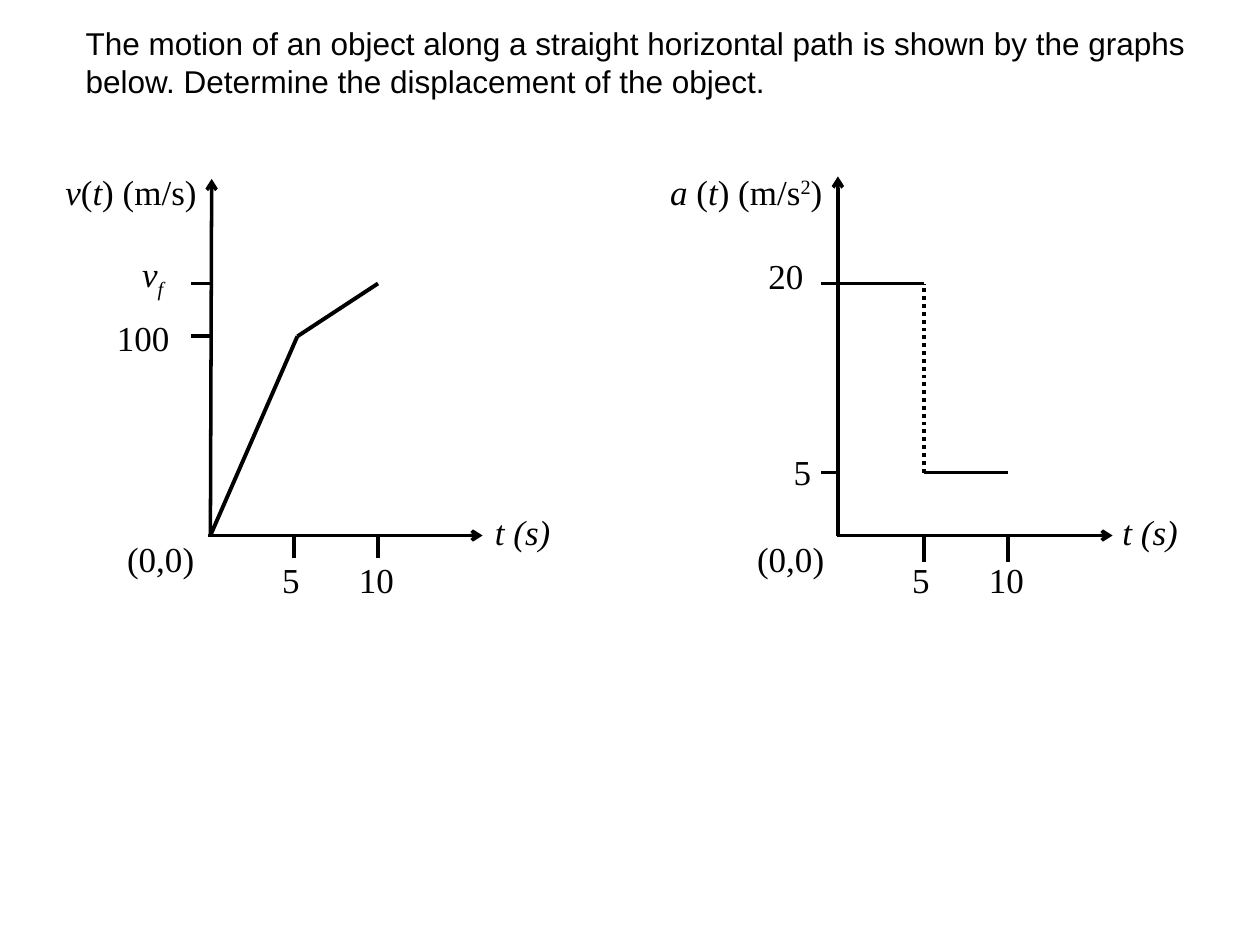
from dataclasses import dataclass
from typing import NamedTuple

from lxml.etree import SubElement
from pptx import Presentation
from pptx.dml.color import RGBColor
from pptx.enum.dml import MSO_LINE_DASH_STYLE as Dash
from pptx.enum.shapes import MSO_CONNECTOR as Connector
from pptx.enum.text import MSO_ANCHOR as Anchor, MSO_AUTO_SIZE as AutoSize, PP_ALIGN as Align
from pptx.oxml.ns import qn
from pptx.util import Emu, Pt

BLACK = "000000"
SUBSCRIPT, SUPERSCRIPT = -25, 30


def px(length: int) -> Emu:
    """100 px make one inch."""
    return Emu(length * 9144)


def color(hex_string: str) -> RGBColor:
    return RGBColor.from_string(hex_string)


class Piece(NamedTuple):
    text: str
    italic: bool = False
    baseline: int = 0


class Label(NamedTuple):
    left: int
    top: int
    width: int
    height: int
    pieces: list[Piece]


class Line(NamedTuple):
    start: tuple[int, int]
    end: tuple[int, int]
    weight: float = 2.25
    dotted: bool = False
    arrow: bool = False


@dataclass
class Graph:
    origin: int  # x of the zero on the time axis
    vertical_axis: Line
    time_axis: Line
    tick_bottom: int
    tick_levels: list[int]
    curve: list[Line]
    labels: list[Label]


AXIS_Y = 425
TIME_TICKS = (66, 133)
TICK_LENGTH = 15
TIME_NAME = [Piece("t (s)", True)]

GRAPHS = [
    # Velocity against time
    Graph(
        origin=167,
        vertical_axis=Line((167, AXIS_Y), (168, 142), 2, arrow=True),
        time_axis=Line((165, AXIS_Y), (383, AXIS_Y), 2, arrow=True),
        tick_bottom=443,
        tick_levels=[225, 267],
        curve=[Line((167, AXIS_Y), (236, 267)), Line((236, 267), (300, 225))],
        labels=[
            Label(42, 125, 150, 51, [Piece("v", True), Piece("("), Piece("t", True), Piece(") (m/s)")]),
            Label(103, 190, 55, 68, [Piece("v", True), Piece("f", True, SUBSCRIPT)]),
            Label(83, 241, 77, 51, [Piece("100")]),
            Label(383, 395, 83, 63, TIME_NAME),
        ],
    ),
    # Acceleration against time
    Graph(
        origin=667,
        vertical_axis=Line((665, AXIS_Y), (665, 140), 2, arrow=True),
        time_axis=Line((664, AXIS_Y), (883, AXIS_Y), 2, arrow=True),
        tick_bottom=446,
        tick_levels=[225, 375],
        curve=[
            Line((667, 225), (733, 225)),
            Line((733, 375), (733, 225), dotted=True),
            Line((733, 375), (800, 375)),
        ],
        labels=[
            Label(522, 125, 170, 51, [
                Piece("a ", True), Piece("("), Piece("t", True), Piece(") (m/s"),
                Piece("2", baseline=SUPERSCRIPT), Piece(")"),
            ]),
            Label(600, 192, 65, 61, [Piece("20")]),
            Label(620, 348, 47, 61, [Piece("5")]),
            Label(881, 395, 77, 63, TIME_NAME),
        ],
    ),
]


def add_run(paragraph, piece: Piece, font_name: str, size: int) -> None:
    run = paragraph.add_run()
    run.text = piece.text
    font = run.font
    font.name = font_name
    font.size = Pt(size)
    font.bold = False
    font.italic = piece.italic
    font.color.rgb = color(BLACK)
    if piece.baseline:
        run._r.get_or_add_rPr().set("baseline", str(piece.baseline * 1000))


def add_title(slide, text: str) -> None:
    title = slide.shapes.title
    title.left, title.top, title.width, title.height = px(58), px(14), px(908), px(71)
    frame = title.text_frame
    frame.word_wrap = True
    frame.auto_size = AutoSize.SHAPE_TO_FIT_TEXT
    frame.vertical_anchor = Anchor.TOP
    paragraph = frame.paragraphs[0]
    paragraph.alignment = Align.LEFT
    paragraph.line_spacing = 1.0
    paragraph.space_before = Pt(0)
    add_run(paragraph, Piece(text), "Arial", 18)


def add_label(slide, label: Label) -> None:
    shape = slide.shapes.add_textbox(px(label.left), px(label.top), px(label.width), px(label.height))
    shape.text_frame.word_wrap = True
    paragraph = shape.text_frame.paragraphs[0]
    paragraph.line_spacing = 1.15
    paragraph.space_after = Pt(10)
    for piece in label.pieces:
        add_run(paragraph, piece, "Times New Roman", 20)


def add_line(slide, line: Line) -> None:
    ends = [px(value) for value in (*line.start, *line.end)]
    connector = slide.shapes.add_connector(Connector.STRAIGHT, *ends)
    connector.line.color.rgb = color(BLACK)
    connector.line.width = Pt(line.weight)
    if line.dotted:
        connector.line.dash_style = Dash.ROUND_DOT
    if line.arrow:
        SubElement(connector.line._get_or_add_ln(), qn("a:tailEnd"), type="arrow")
    SubElement(connector._element.spPr, qn("a:effectLst"))


def add_graph(slide, graph: Graph) -> None:
    # Axes and curve
    for line in (graph.vertical_axis, graph.time_axis, *graph.curve):
        add_line(slide, line)
    # Ticks
    for offset in TIME_TICKS:
        x = graph.origin + offset
        add_line(slide, Line((x, graph.tick_bottom), (x, AXIS_Y)))
    for y in graph.tick_levels:
        add_line(slide, Line((graph.origin - TICK_LENGTH, y), (graph.origin, y)))
    # Labels shared by both graphs, then the graph's own
    shared = [
        Label(graph.origin - 76, 417, 92, 55, [Piece("(0,0)")]),
        Label(graph.origin + 47, 433, 44, 55, [Piece("5")]),
        Label(graph.origin + 108, 433, 60, 55, [Piece("10")]),
    ]
    for label in shared + graph.labels:
        add_label(slide, label)


def main() -> None:
    presentation = Presentation()
    presentation.slide_width, presentation.slide_height = px(1000), px(750)
    slide = presentation.slides.add_slide(presentation.slide_layouts[5])
    add_title(
        slide,
        "The motion of an object along a straight horizontal path is shown by the graphs below. "
        "Determine the displacement of the object.",
    )
    for graph in GRAPHS:
        add_graph(slide, graph)
    presentation.save("out.pptx")


if __name__ == "__main__":
    main()
